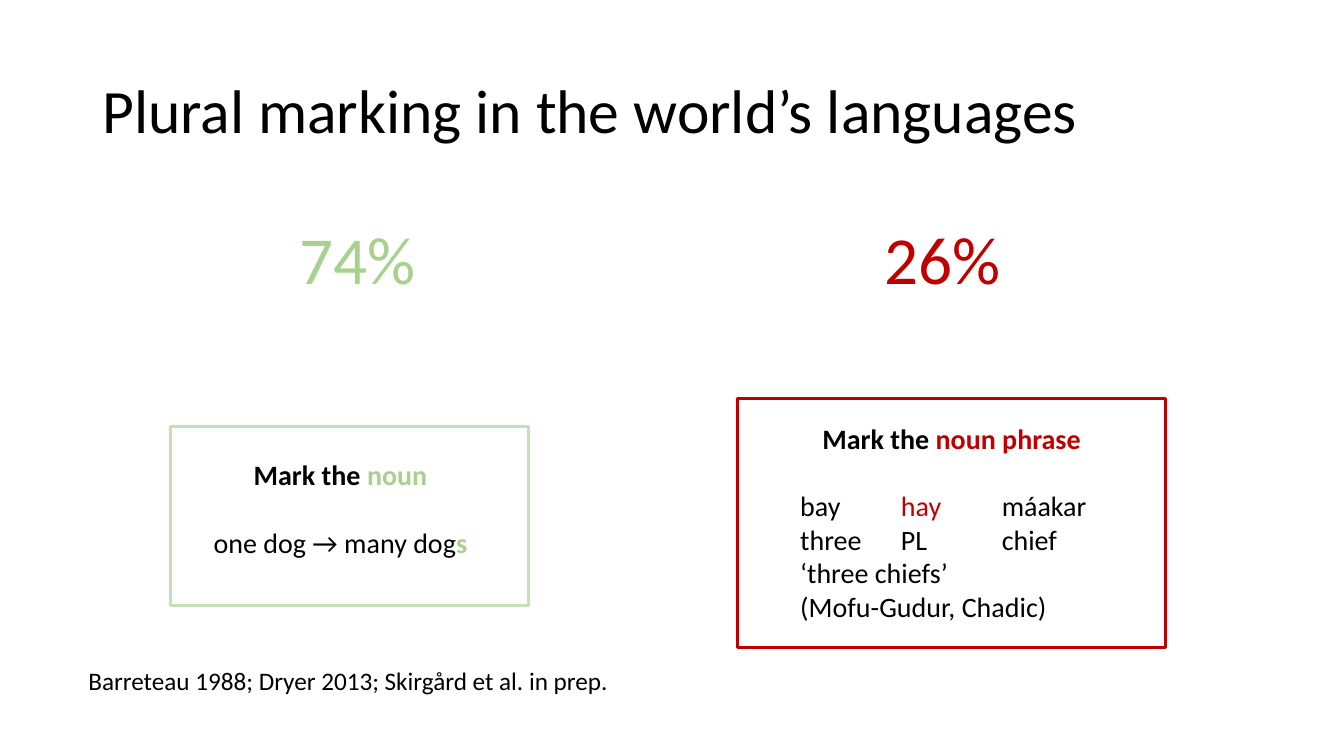
from dataclasses import dataclass

from lxml import etree
from pptx import Presentation
from pptx.dml.color import RGBColor
from pptx.enum.shapes import MSO_SHAPE
from pptx.enum.text import MSO_ANCHOR, PP_ALIGN
from pptx.oxml.ns import qn
from pptx.util import Pt

BLACK = RGBColor(0x00, 0x00, 0x00)
GREEN = RGBColor(0xA9, 0xD1, 0x8E)
PALE_GREEN = RGBColor(0xC5, 0xE0, 0xB4)
RED = RGBColor(0xC0, 0x00, 0x00)
LEFT, CENTER = PP_ALIGN.LEFT, PP_ALIGN.CENTER
TOP, MIDDLE = MSO_ANCHOR.TOP, MSO_ANCHOR.MIDDLE
RECTANGLE = MSO_SHAPE.RECTANGLE
FONT = "Calibri"
GLOSS_TABS = (72, 144)
LINE_GAP = 24


@dataclass(frozen=True)
class Run:
    text: str
    color: RGBColor = BLACK
    bold: bool = False


@dataclass(frozen=True)
class Para:
    runs: tuple[Run, ...]
    align: PP_ALIGN = LEFT
    before: float = 0
    spacing: float = 1.0
    tabs: tuple[float, ...] = ()


@dataclass(frozen=True)
class TextBlock:
    box: tuple[float, float, float, float]
    size: float
    paras: tuple[Para, ...]
    anchor: MSO_ANCHOR = TOP


@dataclass(frozen=True)
class Frame:
    box: tuple[float, float, float, float]
    color: RGBColor


def heading(term: str, color: RGBColor) -> Para:
    return Para((Run("Mark the ", bold=True), Run(term, color, True)), CENTER)


TEXTS = (
    TextBlock((66, 29, 758, 104), 44,
              (Para((Run("Plural marking in the world’s languages"),), spacing=0.9),), MIDDLE),
    TextBlock((56, 471.5, 855, 29), 18,
              (Para((Run("Barreteau 1988; Dryer 2013; Skirgård et al. in prep."),)),)),
    TextBlock((206.5, 152, 110, 65.5), 48, (Para((Run("74%", GREEN),)),)),
    TextBlock((625, 152, 110, 65.5), 48, (Para((Run("26%", RED),)),)),
    TextBlock((139.5, 323.5, 207.5, 80), 20, (
        heading("noun", GREEN),
        Para((Run("one dog → many dog"), Run("s", GREEN, True)), CENTER, LINE_GAP),
    )),
    TextBlock((564.5, 297.5, 230.5, 152.5), 20, (
        heading("noun phrase", RED),
        Para((Run("bay\t"), Run("hay\t", RED), Run("máakar")),
             before=LINE_GAP, tabs=GLOSS_TABS),
        Para((Run("three\tPL\tchief"),), tabs=GLOSS_TABS),
        Para((Run("‘three chiefs’"),)),
        Para((Run("(Mofu-Gudur, Chadic)"),)),
    )),
)

FRAMES = (
    Frame((121.75, 304.75, 255.5, 128), PALE_GREEN),
    Frame((527, 284.5, 305.25, 178), RED),
)


def set_tabs(p, stops: tuple[float, ...]) -> None:
    """Add left tab stops, in points from the text edge."""
    tab_list = etree.SubElement(p._p.get_or_add_pPr(), qn("a:tabLst"))
    for stop in stops:
        etree.SubElement(tab_list, qn("a:tab"), pos=str(Pt(stop)), algn="l")


def add_text(s, block: TextBlock) -> None:
    tf = s.shapes.add_textbox(*map(Pt, block.box)).text_frame
    tf.word_wrap = True
    tf.vertical_anchor = block.anchor
    for i, para in enumerate(block.paras):
        p = tf.add_paragraph() if i else tf.paragraphs[0]
        para_format = {"alignment": para.align, "line_spacing": para.spacing,
                       "space_before": Pt(para.before)}
        for name, value in para_format.items():
            setattr(p, name, value)
        if para.tabs:
            set_tabs(p, para.tabs)
        for run in para.runs:
            r = p.add_run()
            r.text = run.text
            run_format = {"name": FONT, "size": Pt(block.size), "bold": run.bold}
            for name, value in run_format.items():
                setattr(r.font, name, value)
            r.font.color.rgb = run.color


def add_frame(s, frame: Frame) -> None:
    sp = s.shapes.add_shape(RECTANGLE, *map(Pt, frame.box))
    sp.shadow.inherit = False
    sp.fill.background()
    sp.line.color.rgb = frame.color
    sp.line.width = Pt(2.25)


def main() -> None:
    prs = Presentation()
    prs.slide_width, prs.slide_height = Pt(960), Pt(540)
    s = prs.slides.add_slide(prs.slide_layouts[6])
    for block in TEXTS:
        add_text(s, block)
    for frame in FRAMES:
        add_frame(s, frame)
    prs.save("out.pptx")


if __name__ == "__main__":
    main()
